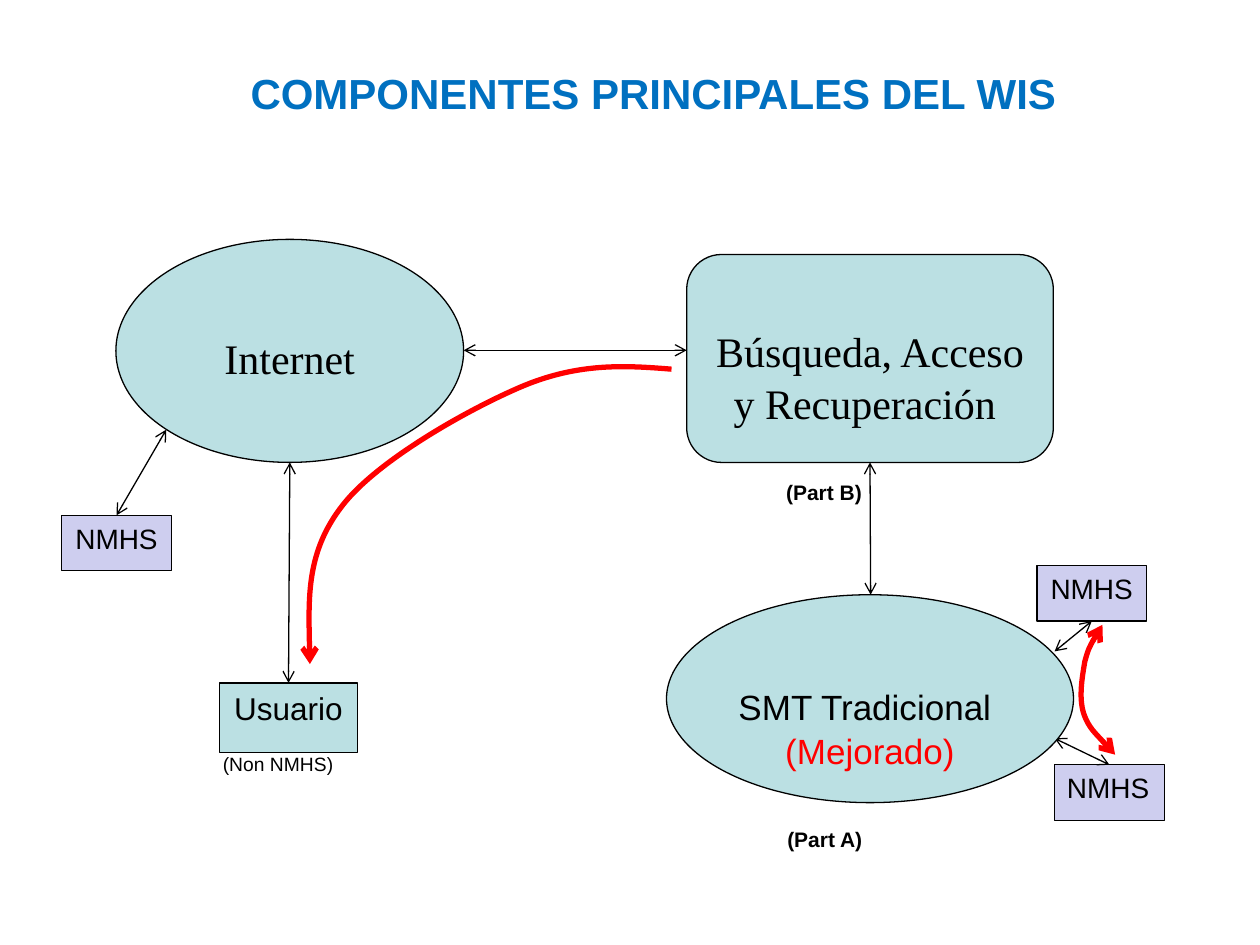
from dataclasses import dataclass

from pptx import Presentation
from pptx.dml.color import RGBColor
from pptx.enum.shapes import MSO_CONNECTOR as Link, MSO_SHAPE as Form
from pptx.enum.text import MSO_ANCHOR as Anchor, PP_ALIGN as Align
from pptx.oxml.ns import qn
from pptx.oxml.xmlchemy import OxmlElement
from pptx.util import Inches, Pt


@dataclass(frozen=True)
class Theme:
    sans: str = "Arial"
    serif: str = "Times New Roman"
    title: str = "0070C0"
    ink: str = "000000"
    flow: str = "FF0000"
    system: str = "BBE0E3"
    station: str = "CECEEF"
    heading_size: int = 24
    network_size: int = 20
    user_size: int = 18
    station_size: int = 16
    part_size: int = 12
    note_size: int = 11
    thin: float = 0.75
    thick: float = 3


THEME = Theme()
TOP, LEFT, BOTTOM = 0, 1, 2
STATION_SIZE = (0.87, 0.44)
LOWERED = 0.46  # top inset that drops a label below the shape's edge


def color(value):
    return RGBColor.from_string(value)


def add_span(para, text, size, font=THEME.sans, ink=THEME.ink, bold=False):
    span = para.add_run()
    span.text = text
    span.font.name = font
    span.font.size = Pt(size)
    span.font.bold = bold
    span.font.color.rgb = color(ink)


def add_node(page, form, area, fill, top_inset=0.05):
    node = page.shapes.add_shape(form, *map(Inches, area))
    node.shadow.inherit = False
    node.fill.solid()
    node.fill.fore_color.rgb = color(fill)
    node.line.color.rgb = color(THEME.ink)
    node.line.width = Pt(THEME.thin)
    frame = node.text_frame
    frame.word_wrap = True
    frame.vertical_anchor = Anchor.TOP
    frame.margin_top = Inches(top_inset)
    frame.paragraphs[0].alignment = Align.CENTER
    return node


def add_station(page, left, top):
    box = add_node(page, Form.RECTANGLE, (left, top, *STATION_SIZE), THEME.station)
    add_span(box.text_frame.paragraphs[0], "NMHS", THEME.station_size)
    return box


def add_label(page, area, text, size, ink=THEME.ink, bold=False):
    box = page.shapes.add_textbox(*map(Inches, area))
    box.text_frame.word_wrap = False
    add_span(box.text_frame.paragraphs[0], text, size, ink=ink, bold=bold)


def add_arrowheads(shape, ends):
    line = shape.line._get_or_add_ln()
    for end in ends:
        head = OxmlElement(f"a:{end}")
        head.set("type", "arrow")
        line.append(head)


def add_link(page, start, finish, start_join=None, finish_join=None):
    link = page.shapes.add_connector(
        Link.STRAIGHT, *map(Inches, (*start, *finish)))
    link.line.color.rgb = color(THEME.ink)
    link.line.width = Pt(THEME.thin)
    add_arrowheads(link, ("headEnd", "tailEnd"))
    link.element.spPr.append(OxmlElement("a:effectLst"))
    if start_join:
        link.begin_connect(*start_join)
    if finish_join:
        link.end_connect(*finish_join)


def add_flow(page, points, ends):
    """Draw a Bézier curve: a start, then three points for each segment."""
    start, *rest = [tuple(map(Inches, point)) for point in points]
    builder = page.shapes.build_freeform(*start)
    builder.add_line_segments(rest, close=False)
    flow = builder.convert_to_shape()
    flow.shadow.inherit = False
    flow.fill.background()
    flow.line.color.rgb = color(THEME.flow)
    flow.line.width = Pt(THEME.thick)
    add_arrowheads(flow, ends)
    # Each group of three line steps becomes one cubic segment
    steps = list(flow.element.iter(qn("a:lnTo")))
    for first in range(0, len(steps), 3):
        curve = OxmlElement("a:cubicBezTo")
        steps[first].addprevious(curve)
        for step in steps[first:first + 3]:
            curve.append(step[0])
            step.getparent().remove(step)


def main():
    deck = Presentation()
    deck.slide_width, deck.slide_height = Inches(10), Inches(7.5)
    page = deck.slides.add_slide(deck.slide_layouts[6])

    # Title
    add_label(page, (1.89, 0.49, 6.66, 0.5), "COMPONENTES PRINCIPALES DEL WIS",
              THEME.heading_size, THEME.title, bold=True)

    # Lower station, whose link runs behind the traditional network
    lower = add_station(page, 8.37, 6.07)
    lower.text_frame.paragraphs[0].alignment = Align.LEFT
    add_link(page, (8.8, 6.07), (8.37, 5.86), start_join=(lower, TOP))

    # Traditional network
    network = add_node(page, Form.OVAL, (5.29, 4.72, 3.23, 1.65),
                       THEME.system, LOWERED)
    first = network.text_frame.paragraphs[0]
    first.alignment = Align.LEFT
    add_span(first, "SMT Tradicional", THEME.network_size)
    second = network.text_frame.add_paragraph()
    second.alignment = Align.CENTER
    add_span(second, "(Mejorado)", THEME.network_size, ink=THEME.flow)

    # Internet and search service
    internet = add_node(page, Form.OVAL, (0.92, 1.9, 2.76, 1.77),
                        THEME.system, LOWERED)
    add_span(internet.text_frame.paragraphs[0], "Internet",
             THEME.heading_size, THEME.serif)
    search = add_node(page, Form.ROUNDED_RECTANGLE, (5.45, 2.02, 2.91, 1.65),
                      THEME.system, LOWERED)
    add_span(search.text_frame.paragraphs[0], "Búsqueda, Acceso y Recuperación ",
             THEME.heading_size, THEME.serif)
    for node in (network, internet, search):
        for para in node.text_frame.paragraphs:
            para.line_spacing = 1.05

    # User and remaining stations
    user = add_node(page, Form.RECTANGLE, (1.74, 5.42, 1.1, 0.55), THEME.system)
    add_span(user.text_frame.paragraphs[0], "Usuario", THEME.user_size)
    upper = add_station(page, 8.23, 4.49)
    western = add_station(page, 0.49, 4.09)

    # Two-way links
    add_link(page, (3.68, 2.78), (5.45, 2.78))
    add_link(page, (2.3, 3.67), (2.29, 5.42), finish_join=(user, TOP))
    add_link(page, (6.91, 3.67), (6.91, 4.72), start_join=(search, BOTTOM))
    add_link(page, (8.66, 4.93), (8.37, 5.17), start_join=(upper, BOTTOM))
    add_link(page, (0.92, 4.09), (1.32, 3.41), start_join=(western, TOP))

    # Red data flows
    add_flow(page, [(2.46, 5.27), (2.45, 4.83), (2.43, 4.38), (2.72, 4.01),
                    (3, 3.65), (3.73, 3.24), (4.16, 3.06),
                    (4.6, 2.88), (4.96, 2.9), (5.33, 2.93)], ("headEnd",))
    add_flow(page, [(8.75, 4.96), (8.69, 5.05), (8.64, 5.14), (8.61, 5.25),
                    (8.59, 5.37), (8.56, 5.53), (8.6, 5.66),
                    (8.64, 5.78), (8.85, 5.99), (8.85, 5.99)],
             ("headEnd", "tailEnd"))

    # Captions
    add_label(page, (1.67, 5.92, 1.09, 0.29), "(Non NMHS)", THEME.note_size)
    add_label(page, (6.15, 6.51, 0.8, 0.3), "(Part A)", THEME.part_size, bold=True)
    add_label(page, (6.14, 3.76, 0.81, 0.3), "(Part B)", THEME.part_size, bold=True)

    deck.save("out.pptx")


if __name__ == "__main__":
    main()
